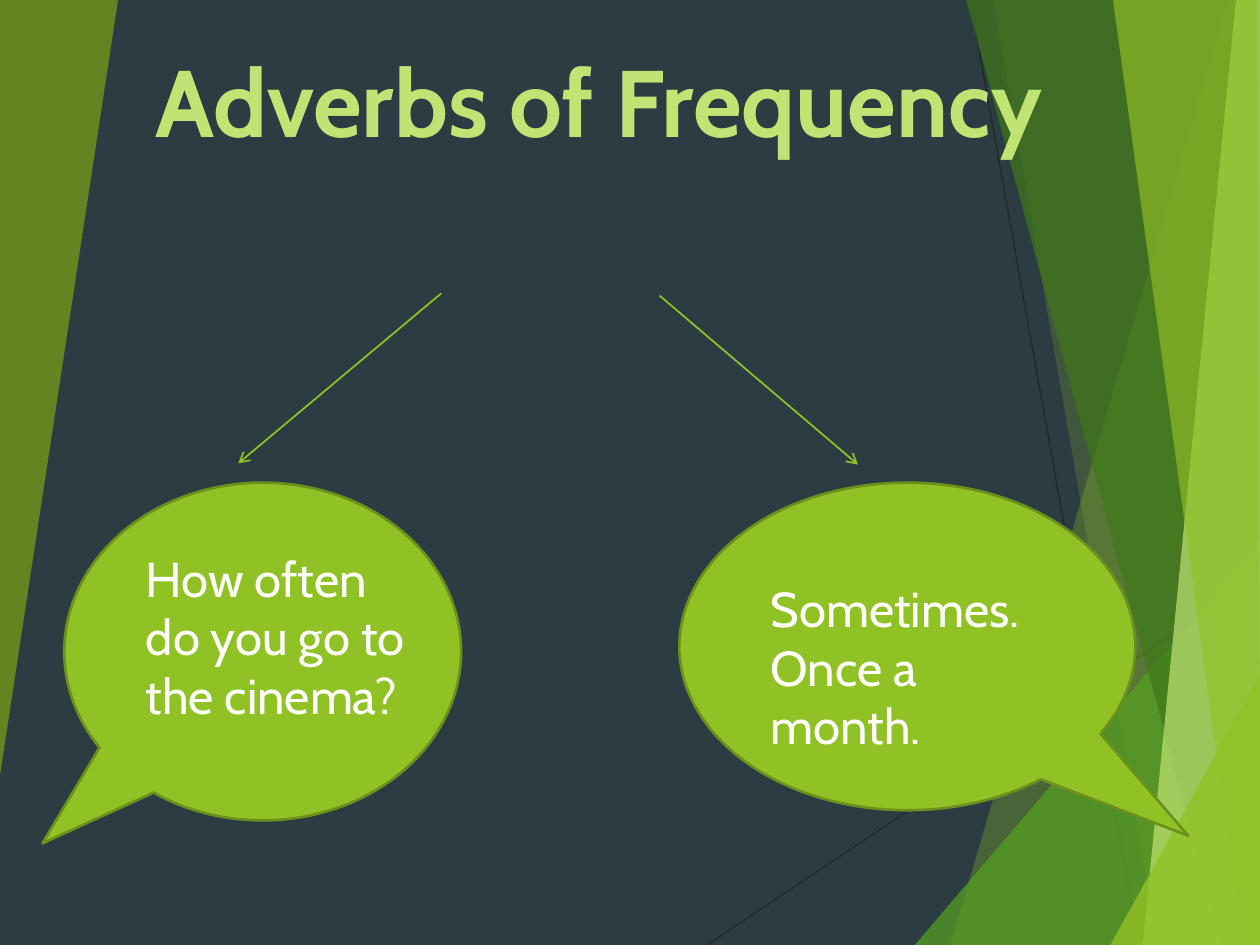
"""Build the Adverbs of Frequency slide with its two speech bubbles."""
from lxml.etree import SubElement
from pptx import Presentation
from pptx.dml.color import RGBColor
from pptx.enum.shapes import MSO_CONNECTOR, MSO_SHAPE
from pptx.enum.text import MSO_ANCHOR, MSO_AUTO_SIZE, PP_ALIGN
from pptx.oxml.ns import qn
from pptx.util import Pt

WIDE, HIGH = 720, 540
NIGHT = RGBColor(0x2C, 0x3C, 0x43)
BLACK = RGBColor(0x26, 0x26, 0x26)
WHITE = RGBColor(0xFF, 0xFF, 0xFF)
LIME = RGBColor(0x90, 0xC2, 0x26)
OLIVE = RGBColor(0x6B, 0x90, 0x1C)
MOSS = RGBColor(0x6C, 0x92, 0x1D)
GRASS = RGBColor(0x54, 0xA0, 0x21)
FOREST = RGBColor(0x3F, 0x78, 0x19)
PALE = RGBColor(0xC0, 0xE4, 0x74)


class Painter:
    """Hold the font and the current slide, and draw each kind of element."""

    font = "Cabin"

    def __init__(self, slide):
        self.slide = slide
        self.shapes = slide.shapes
        back = slide.background.fill
        back.solid()
        back.fore_color.rgb = NIGHT

    def facet(self, color, alpha, points):
        first, *rest = [(Pt(x), Pt(y)) for x, y in points]
        pen = self.shapes.build_freeform(*first)
        pen.add_line_segments(rest, close=True)
        shape = pen.convert_to_shape()
        shape.shadow.inherit = False
        shape.fill.solid()
        shape.fill.fore_color.rgb = color
        shape.line.fill.background()
        tint = shape.fill._xPr.find(".//" + qn("a:srgbClr"))
        SubElement(tint, qn("a:alpha")).set("val", str(alpha * 1000))

    def line(self, start, end, color, width, arrow=False):
        ends = [Pt(v) for v in (*start, *end)]
        link = self.shapes.add_connector(MSO_CONNECTOR.STRAIGHT, *ends)
        link.line.color.rgb = color
        link.line.width = Pt(width)
        if arrow:
            SubElement(link.line._get_or_add_ln(), qn("a:tailEnd")).set("type", "arrow")
        SubElement(link._element.spPr, qn("a:effectLst"))

    def bubble(self, box, tip):
        shape = self.shapes.add_shape(MSO_SHAPE.OVAL_CALLOUT, *map(Pt, box))
        shape.shadow.inherit = False
        shape.adjustments[0], shape.adjustments[1] = tip
        shape.fill.solid()
        shape.fill.fore_color.rgb = LIME
        shape.line.color.rgb = OLIVE
        shape.line.width = Pt(1.5)

    def text(self, box, words, size, color, bold=False, align=PP_ALIGN.LEFT):
        frame = self.shapes.add_textbox(*map(Pt, box)).text_frame
        frame.word_wrap = True
        frame.auto_size = MSO_AUTO_SIZE.SHAPE_TO_FIT_TEXT
        frame.vertical_anchor = MSO_ANCHOR.TOP
        frame.text = words
        para = frame.paragraphs[0]
        para.alignment = align
        font = para.runs[0].font
        font.name, font.size, font.bold = self.font, Pt(size), bold
        font.color.rgb = color


def main():
    deck = Presentation()
    deck.slide_width, deck.slide_height = Pt(WIDE), Pt(HIGH)
    art = Painter(deck.slides.add_slide(deck.slide_layouts[6]))

    art.line((404, HIGH), (WIDE, 329), BLACK, 0.75)
    art.line((554.4, 0), (651, HIGH), BLACK, 0.75)
    top, base = (WIDE, 0), (WIDE, HIGH)
    facets = [
        (LIME, 30, [(702, 0), (543, HIGH), base, top]),
        (LIME, 20, [(567.4, 0), (661.7, HIGH), base, top]),
        (GRASS, 72, [(522.7, HIGH), (WIDE, 309), base]),
        (FOREST, 70, [(552.2, 0), (698.4, HIGH), base, top]),
        (PALE, 70, [(706.3, 0), (653, HIGH), base, top]),
        (LIME, 65, [(636, 0), (710, HIGH), base, (718.6, 0)]),
        (LIME, 80, [(634.5, HIGH), (WIDE, 385.5), base]),
        (MOSS, 85, [(0, 0), (67.5, 0), (0, 443)]),
    ]
    for facet in facets:
        art.facet(*facet)

    art.text((63.4, 20.9, 557.3, 138.2), "Adverbs of Frequency", 54, PALE,
             bold=True, align=PP_ALIGN.CENTER)
    talks = [
        ((252.2, 167.6), (136.2, 264.8), (36.7, 275.8, 226.8, 193), (-0.555, 0.568),
         (76.3, 309.6, 175.7, 108.7), "How often do you go to the cinema?"),
        ((377, 169), (490.3, 265.5), (388.2, 275.8, 260.6, 187.2), (0.616, 0.578),
         (433.4, 326.9, 187.2, 108.7), "Sometimes. Once a month."),
    ]
    for start, end, oval, tip, box, words in talks:
        art.line(start, end, LIME, 1, arrow=True)
        art.bubble(oval, tip)
        art.text(box, words, 28, WHITE)
    deck.save("out.pptx")


if __name__ == "__main__":
    main()
